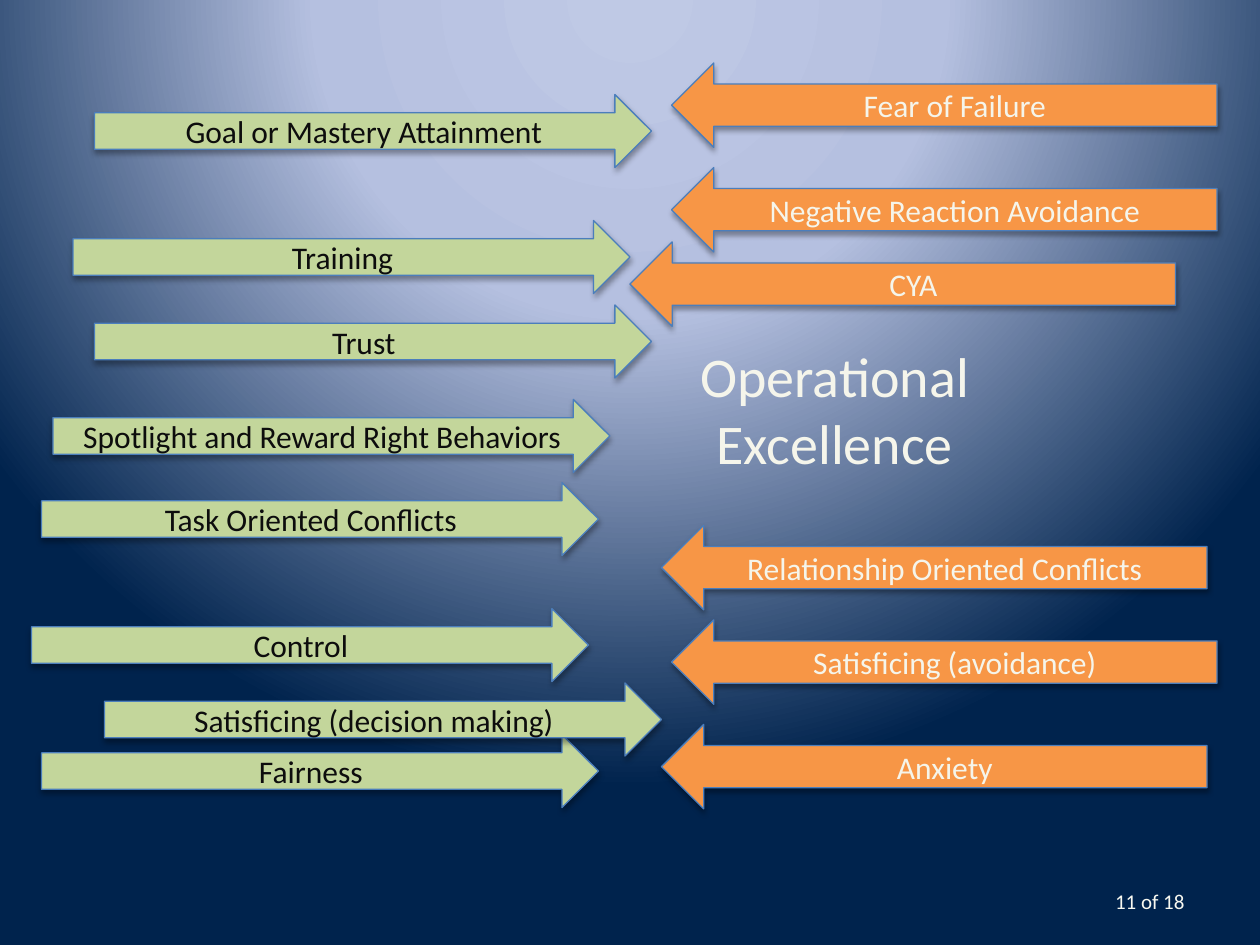
from pptx import Presentation
from pptx.dml.color import RGBColor
from pptx.enum.shapes import MSO_SHAPE
from pptx.enum.text import MSO_ANCHOR, PP_ALIGN
from pptx.oxml import parse_xml
from pptx.oxml.ns import nsdecls
from pptx.util import Inches, Pt

GREEN, ORANGE, BLUE = "C3D69B", "F79646", "4B7EBC"
INK, CREAM, PALE = "0D0D0D", "F5F5EB", "F8F8F0"

# Direction: shape, fill, text colour, width, height
STYLES = {
    "driver": (MSO_SHAPE.RIGHT_ARROW, GREEN, INK, 4.42, 0.58),
    "barrier": (MSO_SHAPE.LEFT_ARROW, ORANGE, CREAM, 4.33, 0.67),
}

# Arrows from back to front: direction, left, top, label
ARROWS = [
    ("driver", 0.58, 1.75, "Training"),
    ("barrier", 5, 1.92, "CYA"),
    ("barrier", 5.33, 1.33, "Negative Reaction Avoidance"),
    ("barrier", 5.33, 0.5, "Fear of Failure"),
    ("barrier", 5.25, 4.17, "Relationship Oriented Conflicts"),
    ("driver", 0.75, 2.42, "Trust"),
    ("driver", 0.33, 3.83, "Task Oriented Conflicts"),
    ("driver", 0.75, 0.75, "Goal or Mastery Attainment"),
    ("driver", 0.25, 4.83, "Control"),
    ("barrier", 5.25, 5.75, "Anxiety"),
    ("driver", 0.33, 5.83, "Fairness"),
    ("driver", 0.42, 3.17, "Spotlight and Reward Right Behaviors"),
    ("barrier", 5.33, 4.92, "Satisficing (avoidance)"),
    ("driver", 0.83, 5.42, "Satisficing (decision making)"),
]


def rgb(color):
    return RGBColor.from_string(color)


def write(sp, text, size, color, align=PP_ALIGN.CENTER, anchor=MSO_ANCHOR.MIDDLE, before=0):
    tf = sp.text_frame
    tf.word_wrap = True
    tf.vertical_anchor = anchor
    p = tf.paragraphs[0]
    p.alignment = align
    p.space_before = Pt(before)
    r = p.add_run()
    r.text = text
    for name, value in {"name": "Calibri", "size": Pt(size)}.items():
        setattr(r.font, name, value)
    r.font.color.rgb = rgb(color)


def add_background(s):
    stops = "".join(
        f'<a:gs pos="{pos * 1000}"><a:srgbClr val="{color}"/></a:gs>'
        for pos, color in [(0, "BFC9E5"), (40, "B5C0E0"), (100, "00234D")])
    s._element.cSld.insert(0, parse_xml(
        f'<p:bg {nsdecls("p", "a")}><p:bgPr><a:gradFill rotWithShape="1">'
        f'<a:gsLst>{stops}</a:gsLst><a:path path="circle">'
        '<a:fillToRect l="50000" t="-80000" r="50000" b="180000"/></a:path>'
        '</a:gradFill><a:effectLst/></p:bgPr></p:bg>'))


def add_shadow(sp):
    sp._element.spPr.append(parse_xml(
        f'<a:effectLst {nsdecls("a")}><a:outerShdw blurRad="{Pt(3.1)}" dist="{Pt(1.8)}" '
        'dir="5400000" rotWithShape="0"><a:srgbClr val="000000"><a:alpha val="35000"/>'
        '</a:srgbClr></a:outerShdw></a:effectLst>'))


def add_arrow(s, direction, left, top, label):
    kind, fill, ink, width, height = STYLES[direction]
    sp = s.shapes.add_shape(kind, *map(Inches, (left, top, width, height)))
    sp.fill.solid()
    sp.fill.fore_color.rgb = rgb(fill)
    sp.line.color.rgb = rgb(BLUE)
    sp.line.width = Pt(0.75)
    add_shadow(sp)
    write(sp, label, 18, ink)


def add_goal(s, box):
    sp = s.shapes.add_shape(MSO_SHAPE.ROUNDED_RECTANGLE, *map(Inches, box))
    sp.shadow.inherit = False
    sp.fill.background()
    sp.line.fill.background()
    write(sp, "Operational Excellence", 32, CREAM, anchor=MSO_ANCHOR.TOP, before=6.4)


def add_page_number(s, box):
    sp = s.shapes.add_textbox(*map(Inches, box))
    write(sp, "11 of 18", 12, PALE, align=PP_ALIGN.RIGHT)


def main():
    prs = Presentation()
    prs.slide_width, prs.slide_height = Inches(10), Inches(7.5)
    s = prs.slides.add_slide(prs.slide_layouts[6])
    add_background(s)
    # Central goal, then the forces for and against it
    add_goal(s, (5, 2.58, 3.25, 1.67))
    for arrow in ARROWS:
        add_arrow(s, *arrow)
    # Footer
    add_page_number(s, (7.17, 6.95, 2.33, 0.4))
    prs.save("out.pptx")


if __name__ == "__main__":
    main()
